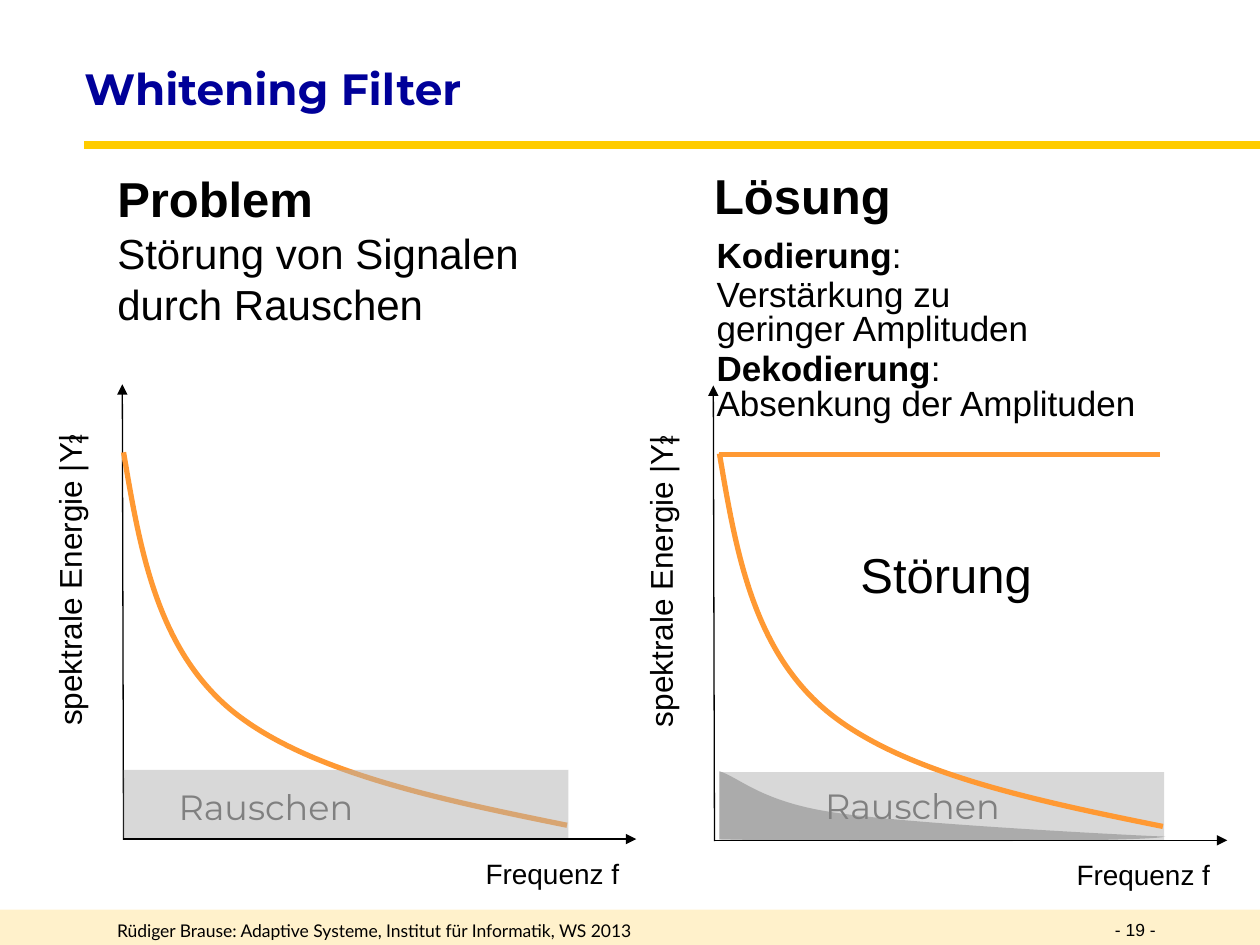
from dataclasses import dataclass

import pptx
import pptx.dml.color
import pptx.enum.shapes
import pptx.enum.text
import pptx.oxml.ns
import pptx.util
from lxml import etree

Pt = pptx.util.Pt
qn = pptx.oxml.ns.qn
ALIGN = pptx.enum.text.PP_ALIGN
ANCHOR = pptx.enum.text.MSO_ANCHOR


@dataclass(frozen=True)
class Theme:
    heading_font: str = "Montserrat"
    text_font: str = "Arial"
    footer_font: str = "Lato"
    black: str = "000000"
    title: str = "000099"
    rule: str = "FFCC00"
    band: str = "FFE499"
    signal: str = "FF9933"
    noise: str = "B2B2B2"
    residue: str = "808080"
    title_size: float = 25
    heading_size: float = 28
    body_size: float = 24
    detail_size: float = 20
    axis_size: float = 18
    unit_size: float = 16
    footer_size: float = 10
    axis_width: float = 0.75
    signal_width: float = 3
    rule_width: float = 4.5


THEME = Theme()
DECAY = [(0, 0), (9.4, 55.8), (19, 111.6), (61.2, 147),
         (103.7, 182.2), (178.6, 198), (253.4, 213.1)]
RESIDUE = [(0, 0), (11.5, 3.6), (24.5, 18), (67, 23.8), (109.4, 30.2),
           (236.2, 36.7), (254.9, 37.4), (240.5, 41), (43.9, 40.3), (0, 38.9)]


def rgb(value):
    return pptx.dml.color.RGBColor.from_string(value)


def format_run(run, size, font=THEME.text_font, color=THEME.black, bold=False):
    run.font.size = Pt(size)
    run.font.name = font
    run.font.bold = bold
    run.font.color.rgb = rgb(color)


def place(shape, left, top, width, height):
    shape.left, shape.top = Pt(left), Pt(top)
    shape.width, shape.height = Pt(width), Pt(height)


def add_text(slide, box, lines, size, wrap=True, align=ALIGN.LEFT, **style):
    label = slide.shapes.add_textbox(*map(Pt, box))
    frame = label.text_frame
    frame.word_wrap = wrap
    frame.text = lines
    for paragraph in frame.paragraphs:
        paragraph.alignment = align
        for run in paragraph.runs:
            format_run(run, size, **style)
    return label


def add_line(slide, start, end, color, width, arrow=False):
    line = slide.shapes.add_connector(
        pptx.enum.shapes.MSO_CONNECTOR.STRAIGHT, *map(Pt, start + end))
    line.line.color.rgb = rgb(color)
    line.line.width = Pt(width)
    if arrow:
        etree.SubElement(line.line._get_or_add_ln(), qn("a:tailEnd"), type="triangle")
    etree.SubElement(line._element.spPr, qn("a:effectLst"))


def fill_half(shape, color):
    shape.shadow.inherit = False
    shape.fill.solid()
    shape.fill.fore_color.rgb = rgb(color)
    tint = shape._element.spPr.find(qn("a:solidFill"))[0]
    etree.SubElement(tint, qn("a:alpha"), val="50000")
    shape.line.fill.background()


def add_band(slide, box, color):
    band = slide.shapes.add_shape(
        pptx.enum.shapes.MSO_SHAPE.RECTANGLE, *map(Pt, box))
    fill_half(band, color)


def add_curve(slide, left, top, points, close=False):
    corners = [(Pt(left + x), Pt(top + y)) for x, y in points]
    builder = slide.shapes.build_freeform(*corners[0])
    builder.add_line_segments(corners[1:], close=close)
    curve = builder.convert_to_shape()
    segments = list(curve._element.iter(qn("a:lnTo")))
    for first in range(0, len(points) - 1, 3):
        trio = segments[first:first + 3]
        bend = etree.Element(qn("a:cubicBezTo"))
        trio[0].addprevious(bend)
        for segment in trio:
            bend.append(segment[0])
            segment.getparent().remove(segment)
    return curve


def draw_signal(slide, left, top):
    signal = add_curve(slide, left, top, DECAY)
    signal.shadow.inherit = False
    signal.fill.background()
    signal.line.color.rgb = rgb(THEME.signal)
    signal.line.width = Pt(THEME.signal_width)


def draw_noise(slide, left, top):
    add_band(slide, (left, top, 254.2, 38.9), THEME.noise)


def draw_noise_label(slide, left, top):
    add_text(slide, (left, top, 130.3, 31), "Rauschen", THEME.detail_size,
             font=THEME.heading_font, color=THEME.residue)


def draw_axes(slide, left, top):
    add_line(slide, (left + 45.4, top + 259.9), (left + 338.4, top + 259.9),
             THEME.black, THEME.axis_width, arrow=True)
    add_line(slide, (left + 45.4, top + 260.4), (left + 44.7, top),
             THEME.black, THEME.axis_width, arrow=True)
    add_text(slide, (left + 243.4, top + 266.4, 92.2, 26.6), "Frequenz f",
             THEME.unit_size, align=ALIGN.RIGHT)
    energy = add_text(slide, (left, top, 36, 202.3), "spektrale Energie |Y|",
                      THEME.axis_size, align=ALIGN.RIGHT)
    energy.rotation = 180
    energy.text_frame._txBody.bodyPr.set("vert", "eaVert")
    square = energy.text_frame.paragraphs[0].add_run()
    square.text = "2"
    format_run(square, THEME.axis_size)
    square.font._element.set("baseline", "30000")


def draw_header(slide, left, top):
    title = slide.shapes.title
    place(title, left, top, 521.3, 39.6)
    frame = title.text_frame
    frame.text = "Whitening Filter"
    frame.word_wrap = False
    frame.auto_size = pptx.enum.text.MSO_AUTO_SIZE.NONE
    frame.vertical_anchor = ANCHOR.TOP
    frame.margin_left = 0
    frame.paragraphs[0].alignment = ALIGN.LEFT
    format_run(frame.paragraphs[0].runs[0], THEME.title_size,
               THEME.heading_font, THEME.title, bold=True)
    add_line(slide, (left, top + 51.1), (720, top + 51.1),
             THEME.rule, THEME.rule_width)


def draw_footer(slide, left, top):
    add_band(slide, (left, top, 720, 20.2), THEME.band)
    add_text(slide, (left + 59.8, top + 2.2, 390.2, 18),
             "Rüdiger Brause: Adaptive Systeme, Institut für Informatik, WS 2013",
             THEME.footer_size, font=THEME.footer_font)
    add_text(slide, (left + 630, top + 1.8, 54, 18.7), "- 19 -", THEME.footer_size)


def draw_problem(slide, left, top):
    problem = slide.placeholders[1]
    place(problem, left, top, 292.3, 106.6)
    frame = problem.text_frame
    frame.text = "Problem\nStörung von Signalen durch Rauschen"
    frame.auto_size = pptx.enum.text.MSO_AUTO_SIZE.NONE
    sizes = (THEME.heading_size, THEME.body_size)
    for index, (paragraph, size) in enumerate(zip(frame.paragraphs, sizes)):
        properties = paragraph._p.get_or_add_pPr()
        properties.set("marL", "0")
        properties.set("indent", "0")
        etree.SubElement(properties, qn("a:buNone"))
        paragraph.line_spacing = 1.0
        paragraph.space_before = Pt(0)
        format_run(paragraph.runs[0], size, bold=index == 0)


def draw_step(slide, box, name, explanation, gap):
    step = add_text(slide, box, f"{name}\n{explanation}", THEME.detail_size)
    heading, *details = step.text_frame.paragraphs
    heading.runs[0].font.bold = True
    colon = heading.add_run()
    colon.text = ":"
    format_run(colon, THEME.detail_size)
    for detail in details:
        detail.line_spacing = Pt(19.5)
    details[0].space_before = Pt(gap)


def draw_solution(slide, left, top):
    add_text(slide, (left, top, 304.6, 41), "Lösung", THEME.heading_size, bold=True)
    draw_step(slide, (left + 1.4, top + 38.9, 303.1, 74.2), "Kodierung",
              "Verstärkung zu\ngeringer Amplituden", 2.4)
    draw_step(slide, (left + 1.4, top + 103, 254.9, 50.4), "Dekodierung",
              "Absenkung der Amplituden", 0.5)


def draw_noisy_plot(slide, left, top):
    draw_axes(slide, left, top)
    draw_signal(slide, left + 45.4, top + 38.9)
    draw_noise(slide, left + 45.4, top + 220.3)
    draw_noise_label(slide, left + 69.8, top + 225.5)


def draw_whitened_plot(slide, left, top):
    start = left + 48.2
    draw_noise(slide, start, top + 221)
    fill_half(add_curve(slide, start, top + 220.4, RESIDUE, close=True), THEME.residue)
    draw_signal(slide, start, top + 38.9)
    draw_noise_label(slide, left + 101.5, top + 224.6)
    draw_axes(slide, left, top)
    add_line(slide, (start, top + 39.6), (start + 252, top + 39.6),
             THEME.signal, THEME.signal_width)
    add_text(slide, (left + 121.7, top + 87.6, 113, 41), "Störung",
             THEME.heading_size, wrap=False)


def main():
    deck = pptx.Presentation()
    deck.slide_width, deck.slide_height = Pt(720), Pt(540)
    slide = deck.slides.add_slide(deck.slide_layouts[1])
    draw_footer(slide, 0, 519.8)
    draw_header(slide, 48.2, 31.7)
    draw_problem(slide, 59.8, 92.9)
    draw_solution(slide, 401, 91.2)
    draw_noisy_plot(slide, 25.2, 219.6)
    draw_whitened_plot(slide, 362.9, 220.3)
    deck.save("out.pptx")


if __name__ == "__main__":
    main()
